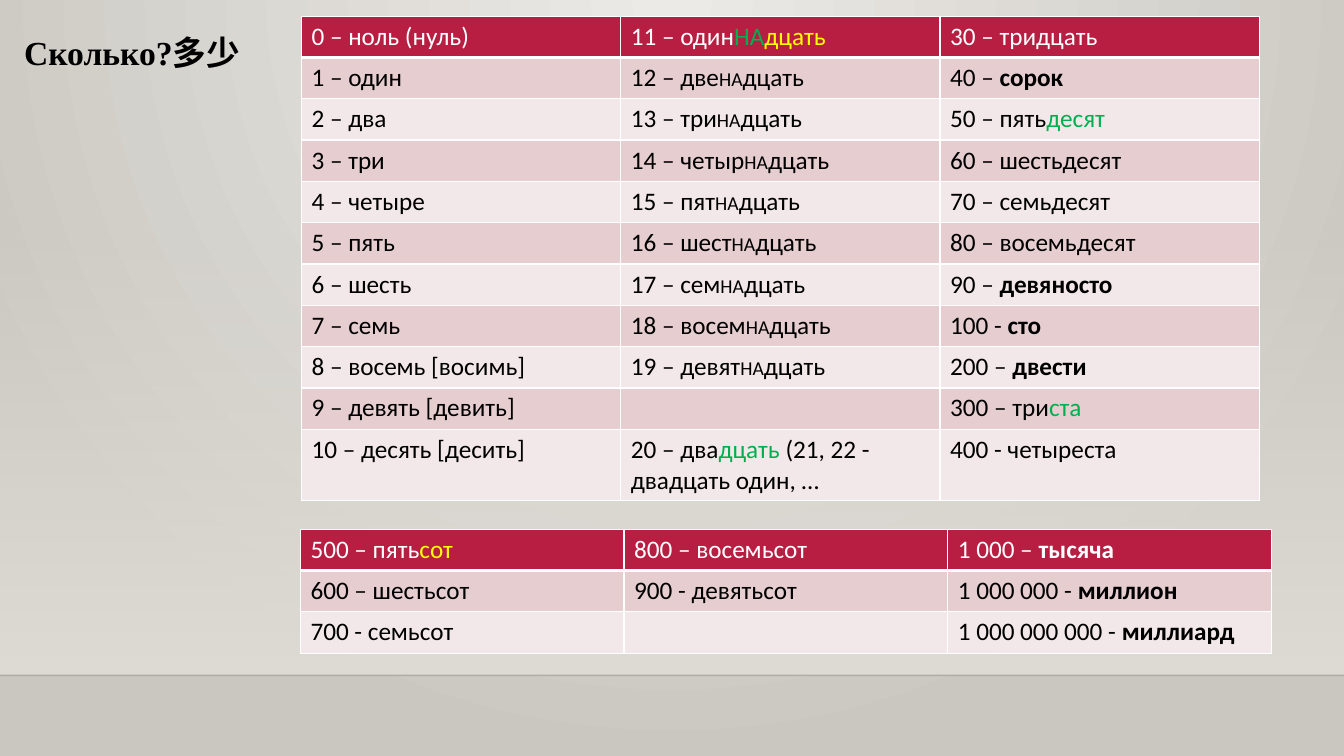
from lxml import etree
from pptx import Presentation
from pptx.dml import color
from pptx.enum import shapes
from pptx.oxml import ns, parse_xml
from pptx.util import Inches, Pt

GREEN, YELLOW, WHITE, BLACK = "00B050", "FFFF00", "FFFFFF", "000000"
HEADER_FILL, BAND_FILLS = "B71E42", ("E6CDCF", "F3E8E9")

# A mark at the start of a run sets its style: bold, small, green, yellow
MARKS = {"*": {"bold": True}, "^": {"size": 14},
         "+": {"hue": GREEN}, "!": {"hue": YELLOW}}

UNITS = ["0 – ноль (нуль)", "1 – один", "2 – два", "3 – три", "4 – четыре",
         "5 – пять", "6 – шесть", "7 – семь", "8 – восемь [восимь]",
         "9 – девять [девить]", "10 – десять [десить]"]
TEEN_STEMS = ["две", "три", "четыр", "пят", "шест", "сем", "восем", "девят"]
TEENS = (["11 – один|+НА|!дцать"]
         + [f"{number} – {stem}|^НА|дцать"
            for number, stem in enumerate(TEEN_STEMS, 12)]
         + ["", "20 – два|+дцать |(21, 22 - двадцать один, …"])
TENS = ["30 – тридцать", "40 – |*сорок", "50 – пять|+десят", "60 – шестьдесят",
        "70 – семьдесят", "80 – восемьдесят", "90 – |*девяносто", "100 - |*сто",
        "200 – |*двести", "300 – три|+ста", "400 - четыреста"]
LARGE_NUMBERS = [
    ["500 – пять|!сот", "800 – восемьсот", "1 000 – |*тысяча"],
    ["600 – шестьсот", "900 - девятьсот", "1 000 000 - |*миллион"],
    ["700 - семьсот", "", "1 000 000 000 - |*миллиард"],
]


def rgb(value):
    return color.RGBColor.from_string(value)


def set_gradient(fill, element, stops, direction):
    """Give a fill colour stops (position, colour, opacity) and a direction."""
    fill.gradient()
    gradient = next(element.iter(ns.qn("a:gradFill")))
    stop_xml = "".join(
        f'<a:gs pos="{position * 1000}"><a:srgbClr val="{hue}">'
        f'<a:alpha val="{opacity * 1000}"/></a:srgbClr></a:gs>'
        for position, hue, opacity in stops)
    new = parse_xml(f'<a:gradFill {ns.nsdecls("a")} rotWithShape="1">'
                    f'<a:gsLst>{stop_xml}</a:gsLst>{direction}</a:gradFill>')
    gradient.getparent().replace(gradient, new)


def add_backdrop(slide, width, floor):
    # Radial light from the top centre
    set_gradient(slide.background.fill, slide.element,
                 [(0, "ECEAE7", 100), (100, "CAC7C1", 100)],
                 '<a:path path="circle"><a:fillToRect l="43000" t="0" '
                 'r="43000" b="100000"/></a:path>')
    # Wall that fades in towards the floor
    top = 2.21
    wall = slide.shapes.add_shape(shapes.MSO_SHAPE.RECTANGLE, 0, Inches(top),
                                  Inches(width), Inches(floor - top))
    wall.shadow.inherit = False
    wall.line.fill.background()
    set_gradient(wall.fill, wall.element,
                 [(0, "DFDBD5", 0), (100, "DFDBD5", 100)],
                 '<a:lin ang="5400000" scaled="0"/>')
    # Floor line
    line = slide.shapes.add_connector(shapes.MSO_CONNECTOR.STRAIGHT, 0,
                                      Inches(floor), Inches(width), Inches(floor))
    line.line.width = Pt(1)
    line.line.color.rgb = rgb("000001")
    hue = next(line.element.iter(ns.qn("a:srgbClr")))
    etree.SubElement(hue, ns.qn("a:alpha"), val="20000")
    etree.SubElement(line.element.spPr, ns.qn("a:effectLst"))


def add_title(slide, left, top, width, height):
    box = slide.shapes.add_textbox(Inches(left), Inches(top),
                                   Inches(width), Inches(height))
    box.text_frame.word_wrap = True
    paragraph = box.text_frame.paragraphs[0]
    paragraph.text = "Сколько?多少"
    paragraph.line_spacing = 1.15
    paragraph.space_after = Pt(10)
    font = paragraph.font
    font.name, font.size, font.bold = "Times New Roman", Pt(24), True
    font.color.rgb = rgb(BLACK)


def set_borders(cell, bottom_width):
    properties = cell._tc.get_or_add_tcPr()
    for side, width in zip("LRTB", (1, 1, 1, bottom_width)):
        properties.append(parse_xml(
            f'<a:ln{side} {ns.nsdecls("a")} w="{Pt(width)}"><a:solidFill>'
            f'<a:srgbClr val="{WHITE}"/></a:solidFill></a:ln{side}>'))


def write_cell(cell, content, hue):
    paragraph = cell.text_frame.paragraphs[0]
    paragraph.font.name, paragraph.font.size = "Calibri", Pt(18)
    for part in filter(None, content.split("|")):
        style = MARKS.get(part[0], {})
        run = paragraph.add_run()
        run.text = part[1:] if style else part
        run.font.name = "Calibri"
        run.font.size = Pt(style.get("size", 18))
        run.font.bold = style.get("bold", False)
        run.font.color.rgb = rgb(style.get("hue", hue))


def add_number_table(slide, rows, left, top, width, row_height=0.41):
    columns = len(rows[0])
    frame = slide.shapes.add_table(len(rows), columns, Inches(left), Inches(top),
                                   Inches(width), Inches(row_height * len(rows)))
    table = frame.table
    table.first_row = table.horz_banding = False
    for column in table.columns:
        column.width = Inches(width / columns)
    for row_index, row in enumerate(rows):
        table.rows[row_index].height = Inches(row_height)
        header = row_index == 0
        for column_index, content in enumerate(row):
            cell = table.cell(row_index, column_index)
            set_borders(cell, 3 if header else 1)
            cell.fill.solid()
            cell.fill.fore_color.rgb = rgb(
                HEADER_FILL if header else BAND_FILLS[(row_index - 1) % 2])
            write_cell(cell, content, WHITE if header else BLACK)


def main():
    presentation = Presentation()
    presentation.slide_width = Inches(13.33)
    presentation.slide_height = Inches(7.5)
    slide = presentation.slides.add_slide(presentation.slide_layouts[6])
    add_backdrop(slide, 13.33, 6.7)
    add_number_table(slide, list(zip(UNITS, TEENS, TENS)), 2.99, 0.16, 9.5)
    add_title(slide, 0.14, 0.21, 2.37, 0.57)
    add_number_table(slide, LARGE_NUMBERS, 2.98, 5.25, 9.63)
    presentation.save("out.pptx")


if __name__ == "__main__":
    main()
